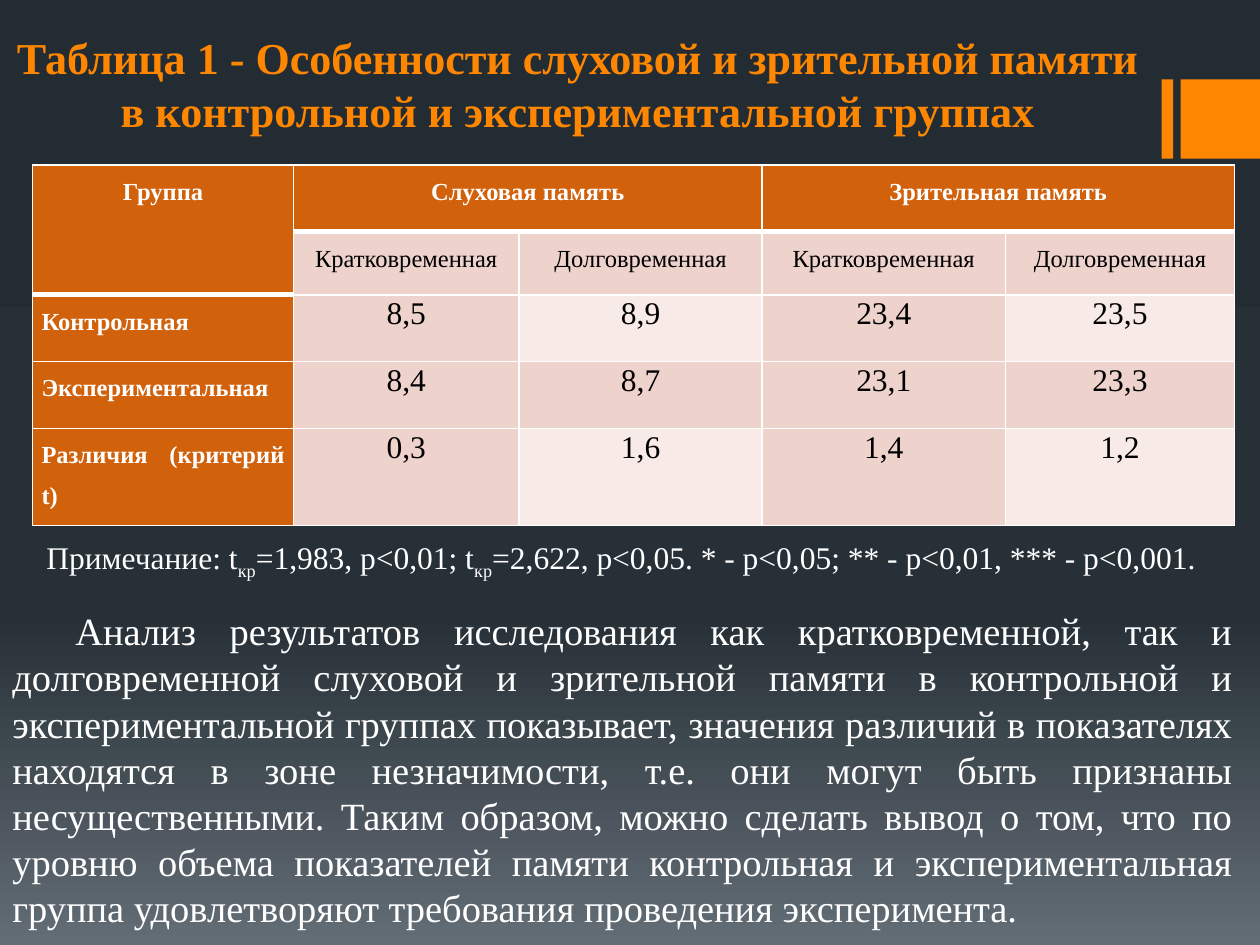
from copy import deepcopy
from dataclasses import dataclass

from lxml import etree
from pptx import Presentation
from pptx.dml.color import RGBColor
from pptx.enum.shapes import MSO_SHAPE
from pptx.enum.text import MSO_ANCHOR, PP_ALIGN
from pptx.oxml.ns import qn
from pptx.util import Inches, Pt

CENTER, JUSTIFY, LEFT = PP_ALIGN.CENTER, PP_ALIGN.JUSTIFY, PP_ALIGN.LEFT


@dataclass(frozen=True)
class Theme:
    font: str = "Times New Roman"
    accent: str = "FF8600"
    header: str = "D2610C"
    band: str = "EED2CC"
    band_light: str = "F7EAE7"
    white: str = "FFFFFF"
    black: str = "000000"
    backdrop: tuple = ((0, "242C33"), (0.65, "273037"), (1, "636D76"))
    title: float = 25.2
    body: float = 22
    value: float = 18
    label: float = 14


THEME = Theme()

TITLE = ("Таблица 1 - Особенности слуховой и зрительной памяти "
         "в контрольной и экспериментальной группах")
COLUMNS = (2.07, 1.79, 1.93, 1.93, 1.82)
ROWS = (0.53, 0.5, 0.53, 0.53, 0.77)
GRID = (
    ("Группа", "Слуховая память", None, "Зрительная память", None),
    (None,) + ("Кратковременная", "Долговременная") * 2,
    ("Контрольная", "8,5", "8,9", "23,4", "23,5"),
    ("Экспериментальная", "8,4", "8,7", "23,1", "23,3"),
    ("Различия (критерий t)", "0,3", "1,6", "1,4", "1,2"),
)
MERGES = (((0, 0), (1, 0)), ((0, 1), (0, 2)), ((0, 3), (0, 4)))
# Each run: text, is it a subscript
NOTE = (
    ("Примечание: t", False), ("кр", True),
    ("=1,983, p<0,01; t", False), ("кр", True),
    ("=2,622, p<0,05. * - p<0,05; ** - p<0,01, *** - p<0,001.", False),
)
ANALYSIS = (
    "Анализ результатов исследования как кратковременной, так и долговременной "
    "слуховой и зрительной памяти в контрольной и экспериментальной группах "
    "показывает, значения различий в показателях находятся в зоне незначимости, "
    "т.е. они могут быть признаны несущественными. Таким образом, можно сделать "
    "вывод о том, что по уровню объема показателей памяти контрольная и "
    "экспериментальная группа удовлетворяют требования проведения эксперимента."
)


def rgb(value):
    return RGBColor.from_string(value)


def place(sp, left, top, width, height):
    sp.left, sp.top = Inches(left), Inches(top)
    sp.width, sp.height = Inches(width), Inches(height)


def add_run(p, text, size, color, bold=False, subscript=False):
    r = p.add_run()
    r.text = text
    r.font.name, r.font.size, r.font.bold = THEME.font, Pt(size), bold
    r.font.color.rgb = rgb(color)
    if subscript:
        r.font._element.set("baseline", "-25000")


def set_background(slide):
    fill = slide.background.fill
    fill.gradient()
    fill.gradient_angle = 270
    stops = slide.element.find(".//" + qn("a:gsLst"))
    stops.append(deepcopy(stops[-1]))
    for stop, (position, color) in zip(fill.gradient_stops, THEME.backdrop):
        stop.position = position
        stop.color.rgb = rgb(color)


def add_bar(slide, left, width):
    sp = slide.shapes.add_shape(MSO_SHAPE.RECTANGLE, Inches(left), Inches(0.63),
                                Inches(width), Inches(0.63))
    sp.shadow.inherit = False
    sp.fill.solid()
    sp.fill.fore_color.rgb = rgb(THEME.accent)
    sp.line.fill.background()


def fill_title(slide):
    sp = slide.shapes.title
    place(sp, 0, 0, 9.17, 1.55)
    tf = sp.text_frame
    tf.word_wrap = True
    tf.vertical_anchor = MSO_ANCHOR.BOTTOM
    tf.margin_bottom = Inches(0.47)
    p = tf.paragraphs[0]
    p.alignment = CENTER
    add_run(p, TITLE, THEME.title, THEME.accent, bold=True)


def add_text(slide, box, runs, size, align=LEFT, indent=0):
    sp = slide.shapes.add_textbox(*map(Inches, box))
    tf = sp.text_frame
    tf.word_wrap = True
    p = tf.paragraphs[0]
    p.alignment = align
    if indent:
        p._p.get_or_add_pPr().set("indent", str(Inches(indent)))
    for text, subscript in runs:
        add_run(p, text, size, THEME.white, subscript=subscript)


def set_borders(cell, heavy):
    tc_pr = cell._tc.get_or_add_tcPr()
    # Borders precede the fill in the cell properties
    for i, side in enumerate("LRTB"):
        ln = etree.Element(qn(f"a:ln{side}"), w=str(Pt(3 if side in heavy else 1)))
        fill = etree.SubElement(ln, qn("a:solidFill"))
        etree.SubElement(fill, qn("a:srgbClr"), val=THEME.white)
        tc_pr.insert(i, ln)


def format_cell(cell, row, col, text):
    is_header = row == 0 or col == 0
    is_value = row > 1 and col > 0
    light = is_value and row % 2 == 0 and col % 2 == 0
    cell.margin_left = cell.margin_right = Inches(0.07)
    cell.margin_top = cell.margin_bottom = 0
    cell.fill.solid()
    cell.fill.fore_color.rgb = rgb(
        THEME.header if is_header else THEME.band_light if light else THEME.band)
    # A heavy rule closes the header above each column
    last_header = 1 if col == 0 else 0
    heavy = "B" if row <= last_header else "T" if row == last_header + 1 else ""
    set_borders(cell, heavy)
    if text is None:
        return
    p = cell.text_frame.paragraphs[0]
    p.alignment = JUSTIFY if col == 0 and row > 1 else CENTER
    p.line_spacing = 1.05 if is_value else 1.5
    p.space_after = Pt(8)
    add_run(p, text, THEME.value if is_value else THEME.label,
            THEME.white if is_header else THEME.black, bold=is_header)


def add_memory_table(slide):
    frame = slide.shapes.add_table(
        len(ROWS), len(COLUMNS), Inches(0.26), Inches(1.31),
        Inches(sum(COLUMNS)), Inches(sum(ROWS)))
    table = frame.table
    for column, width in zip(table.columns, COLUMNS):
        column.width = Inches(width)
    for row, height in zip(table.rows, ROWS):
        row.height = Inches(height)
    for i, texts in enumerate(GRID):
        for j, text in enumerate(texts):
            format_cell(table.cell(i, j), i, j, text)
    for first, last in MERGES:
        table.cell(*first).merge(table.cell(*last))


def main():
    prs = Presentation()
    prs.slide_width, prs.slide_height = Inches(10), Inches(7.5)
    slide = prs.slides.add_slide(prs.slide_layouts[5])

    # Backdrop and corner accent
    set_background(slide)
    add_bar(slide, 9.22, 0.09)
    add_bar(slide, 9.37, 0.63)

    # Title and results table
    fill_title(slide)
    add_memory_table(slide)

    # Note and conclusions
    add_text(slide, (0.27, 4.22, 9.61, 0.71), NOTE, THEME.value)
    add_text(slide, (0, 4.77, 9.88, 2.69), [(ANALYSIS, False)], THEME.body,
             JUSTIFY, indent=0.5)
    prs.save("out.pptx")


if __name__ == "__main__":
    main()
